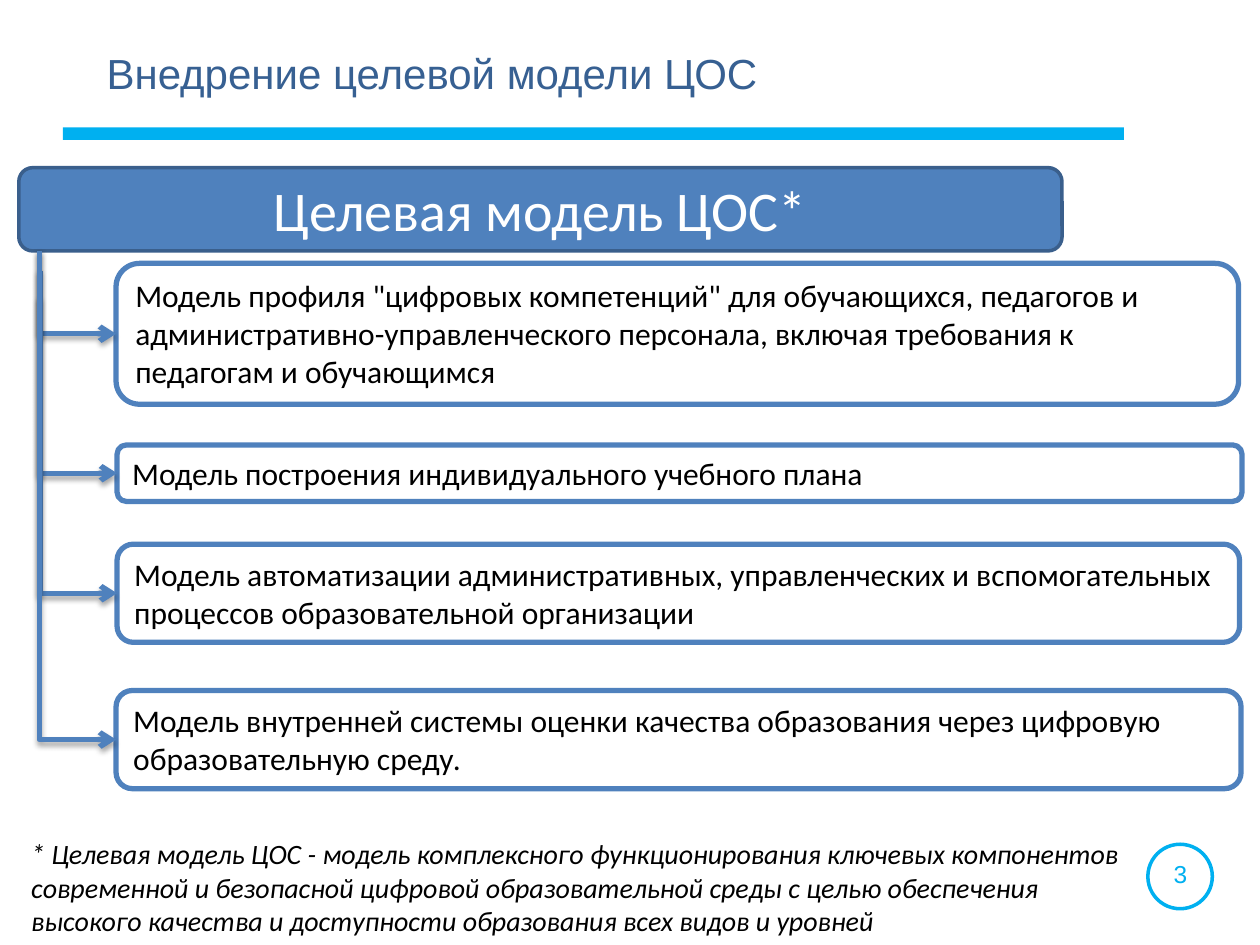
import pptx
import pptx.util
import pptx.dml.color
import pptx.enum.shapes
import pptx.enum.text
import pptx.oxml
import pptx.oxml.ns

Cm = pptx.util.Cm
Pt = pptx.util.Pt
RGBColor = pptx.dml.color.RGBColor
SHAPE = pptx.enum.shapes.MSO_SHAPE
ALIGN = pptx.enum.text.PP_ALIGN
ANCHOR = pptx.enum.text.MSO_ANCHOR
AUTO_SIZE = pptx.enum.text.MSO_AUTO_SIZE
qn = pptx.oxml.ns.qn

CYAN = RGBColor(0x00, 0xB0, 0xF0)
TITLE_BLUE = RGBColor(0x37, 0x60, 0x92)
BLUE = RGBColor(0x4F, 0x81, 0xBD)
DARK_BLUE = RGBColor(0x3A, 0x5F, 0x8C)
WHITE = RGBColor(0xFF, 0xFF, 0xFF)
BLACK = RGBColor(0x00, 0x00, 0x00)

TITLE = "Внедрение целевой модели ЦОС"
HEADING = "Целевая модель ЦОС*"
FOOTNOTE = (
    "* Целевая модель ЦОС - модель комплексного функционирования ключевых "
    "компонентов современной и безопасной цифровой образовательной среды с целью "
    "обеспечения высокого качества и доступности образования всех видов и уровней"
)
PAGE_NUMBER = "3"

# text, box (left, top, width, height), top of the connector
MODELS = [
    ('Модель профиля "цифровых компетенций" для обучающихся, педагогов и '
     "административно-управленческого персонала, включая требования к "
     "педагогам и обучающимся", (2.34, 5.31, 22.63, 2.84), 5.06),
    ("Модель построения индивидуального учебного плана",
     (2.36, 8.97, 22.68, 1.14), 5.46),
    ("Модель автоматизации административных, управленческих и вспомогательных "
     "процессов образовательной организации", (2.36, 10.97, 22.63, 1.98), 5.99),
    ("Модель внутренней системы оценки качества образования через цифровую "
     "образовательную среду.", (2.34, 13.92, 22.68, 1.98), 5.06),
]
CONNECTOR_RUN = 1.55

ARROWHEAD = f'<a:tailEnd {pptx.oxml.ns.nsdecls("a")} type="arrow"/>'
SHADOW = (
    f'<a:effectLst {pptx.oxml.ns.nsdecls("a")}>'
    '<a:outerShdw blurRad="40000" dist="23000" dir="5400000" rotWithShape="0">'
    '<a:srgbClr val="000000"><a:alpha val="35000"/></a:srgbClr>'
    "</a:outerShdw></a:effectLst>"
)


def add_box(slide, preset, box, fill=None, line=None, line_width=0):
    shape = slide.shapes.add_shape(preset, *map(Cm, box))
    shape.shadow.inherit = False
    if fill is None:
        shape.fill.background()
    else:
        shape.fill.solid()
        shape.fill.fore_color.rgb = fill
    if line is None:
        shape.line.fill.background()
    else:
        shape.line.color.rgb = line
        shape.line.width = Pt(line_width)
    return shape


def write(shape, text, size, color, font="Calibri", align=ALIGN.LEFT,
          anchor=ANCHOR.TOP, italic=None, grow=False):
    frame = shape.text_frame
    frame.text = text
    frame.word_wrap = True
    frame.vertical_anchor = anchor
    frame.auto_size = AUTO_SIZE.SHAPE_TO_FIT_TEXT if grow else AUTO_SIZE.NONE
    paragraph = frame.paragraphs[0]
    paragraph.alignment = align
    run_font = paragraph.runs[0].font
    run_font.name = font
    run_font.size = Pt(size)
    run_font.color.rgb = color
    run_font.italic = italic


def add_branch(slide, start_y, end_x, end_y):
    drop = end_y - start_y
    center_x = end_x - CONNECTOR_RUN / 2
    center_y = (start_y + end_y) / 2
    connector = slide.shapes.add_connector(
        pptx.enum.shapes.MSO_CONNECTOR.ELBOW,
        Cm(center_x + drop / 2), Cm(center_y - CONNECTOR_RUN / 2),
        Cm(center_x - drop / 2), Cm(center_y + CONNECTOR_RUN / 2))
    connector.line.color.rgb = BLUE
    connector.line.width = Pt(3)
    properties = connector._element.spPr
    properties.find(qn("a:xfrm")).set("rot", "16200000")
    properties.find(qn("a:prstGeom")).set("prst", "bentConnector2")
    properties.find(qn("a:ln")).append(pptx.oxml.parse_xml(ARROWHEAD))
    properties.append(pptx.oxml.parse_xml(SHADOW))


def main():
    presentation = pptx.Presentation()
    presentation.slide_width = Cm(25.4)
    presentation.slide_height = Cm(19.05)
    slide = presentation.slides.add_slide(presentation.slide_layouts[6])

    add_box(slide, SHAPE.RECTANGLE, (1.27, 2.57, 21.39, 0.25), fill=CYAN)
    add_box(slide, SHAPE.OVAL, (23.14, 17.02, 1.3, 1.3), line=CYAN, line_width=2)
    number = slide.shapes.add_textbox(Cm(23.06), Cm(17.2), Cm(1.47), Cm(0.86))
    write(number, PAGE_NUMBER, 14, CYAN, "Arial", ALIGN.CENTER, grow=True)

    title = slide.shapes.add_textbox(Cm(1.9), Cm(0.84), Cm(19.79), Cm(1.63))
    write(title, TITLE, 24, TITLE_BLUE, "Arial")

    heading = add_box(slide, SHAPE.ROUNDED_RECTANGLE, (0.38, 3.38, 21.03, 1.68),
                      BLUE, DARK_BLUE, 2)
    write(heading, HEADING, 32, WHITE, align=ALIGN.CENTER, anchor=ANCHOR.MIDDLE)

    footnote = slide.shapes.add_textbox(Cm(0.38), Cm(16.74), Cm(22.91), Cm(2.31))
    write(footnote, FOOTNOTE, 16, BLACK, italic=True, grow=True)

    for text, box, _ in MODELS:
        model = add_box(slide, SHAPE.ROUNDED_RECTANGLE, box, WHITE, BLUE, 3)
        write(model, text, 18, BLACK, grow=True)

    for _, (left, top, _, height), start_y in MODELS:
        add_branch(slide, start_y, left, top + height / 2)

    presentation.save("out.pptx")


if __name__ == "__main__":
    main()
